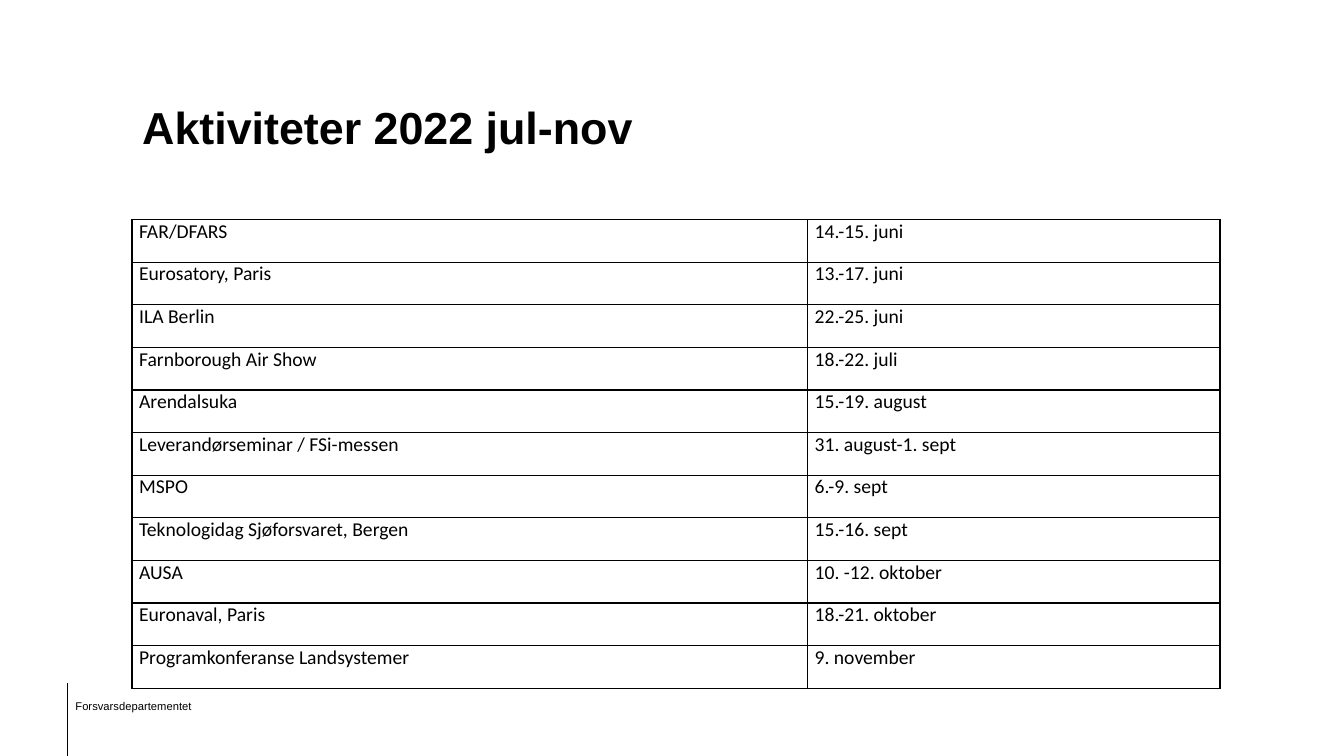
from typing import NamedTuple

from lxml import etree
from pptx import Presentation
from pptx import util as u
from pptx.dml.color import RGBColor
from pptx.enum import shapes, text
from pptx.oxml import ns

BLACK = "000000"
SLIDE_W, SLIDE_H = u.Inches(13.33), u.Inches(7.5)
LEFT_MARGIN = 1.31
NAME_COLUMN, DATE_COLUMN = 6.7, 4.09
TABLE_TOP, TABLE_H = 2.18, 4.65


class Activity(NamedTuple):
    name: str
    date: str


ACTIVITIES = [
    Activity("FAR/DFARS", "14.-15. juni"),
    Activity("Eurosatory, Paris", "13.-17. juni"),
    Activity("ILA Berlin", "22.-25. juni"),
    Activity("Farnborough Air Show", "18.-22. juli"),
    Activity("Arendalsuka", "15.-19. august"),
    Activity("Leverandørseminar / FSi-messen", "31. august-1. sept"),
    Activity("MSPO", "6.-9. sept"),
    Activity("Teknologidag Sjøforsvaret, Bergen", "15.-16. sept"),
    Activity("AUSA", "10. -12. oktober"),
    Activity("Euronaval, Paris", "18.-21. oktober"),
    Activity("Programkonferanse Landsystemer", "9. november"),
]


def color(code: str) -> RGBColor:
    return RGBColor.from_string(code)


def box(left: float, top: float, width: float, height: float) -> list[int]:
    return [u.Inches(length) for length in (left, top, width, height)]


def write(frame, words: str, font_name: str, size: float, bold: bool = False) -> None:
    frame.word_wrap = True
    paragraph = frame.paragraphs[0]
    paragraph.text = words
    paragraph.alignment = text.PP_ALIGN.LEFT
    font = paragraph.font
    font.name, font.size, font.bold = font_name, u.Pt(size), bold
    font.color.rgb = color(BLACK)


def add_borders(cell, code: str, width: float) -> None:
    properties = cell._tc.get_or_add_tcPr()
    for side in ("a:lnL", "a:lnR", "a:lnT", "a:lnB"):
        border = etree.SubElement(properties, ns.qn(side), w=str(u.Pt(width)))
        fill = etree.SubElement(border, ns.qn("a:solidFill"))
        etree.SubElement(fill, ns.qn("a:srgbClr"), val=code)


def fill_cell(cell, words: str) -> None:
    cell.margin_left = cell.margin_right = u.Inches(0.07)
    cell.margin_top = cell.margin_bottom = 0
    write(cell.text_frame, words, "Calibri", 14)
    add_borders(cell, BLACK, 1)
    cell.fill.background()


def add_footer(slide) -> None:
    department = slide.shapes.add_textbox(*box(0.65, 6.89, 2.83, 0.24))
    write(department.text_frame, "Forsvarsdepartementet", "Arial", 8)
    x = u.Inches(0.67)
    rule = slide.shapes.add_connector(
        shapes.MSO_CONNECTOR.STRAIGHT, x, u.Inches(6.78), x, SLIDE_H)
    rule.line.color.rgb = color(BLACK)
    rule.line.width = u.Pt(0.75)
    etree.SubElement(rule._element.spPr, ns.qn("a:effectLst"))


def add_title(slide) -> None:
    title = slide.shapes.title
    title.left, title.top, title.width, title.height = box(LEFT_MARGIN, 0.32, 10.71, 1.25)
    title.text_frame.vertical_anchor = text.MSO_ANCHOR.BOTTOM
    title.text_frame.auto_size = text.MSO_AUTO_SIZE.NONE
    write(title.text_frame, "Aktiviteter 2022 jul-nov", "Arial", 32, bold=True)


def add_schedule(slide) -> None:
    widths = (NAME_COLUMN, DATE_COLUMN)
    frame = slide.shapes.add_table(
        len(ACTIVITIES), len(widths),
        *box(LEFT_MARGIN, TABLE_TOP, sum(widths), TABLE_H))
    schedule = frame.table
    schedule.first_row = schedule.horz_banding = False
    for column, width in zip(schedule.columns, widths):
        column.width = u.Inches(width)
    for row, activity in zip(schedule.rows, ACTIVITIES):
        for cell, words in zip(row.cells, activity):
            fill_cell(cell, words)


def main() -> None:
    deck = Presentation()
    deck.slide_width, deck.slide_height = SLIDE_W, SLIDE_H
    title_only = deck.slide_layouts[5]
    slide = deck.slides.add_slide(title_only)
    # Department name and vertical rule
    add_footer(slide)
    # Heading
    add_title(slide)
    # Activities and dates
    add_schedule(slide)
    deck.save("out.pptx")


if __name__ == "__main__":
    main()
